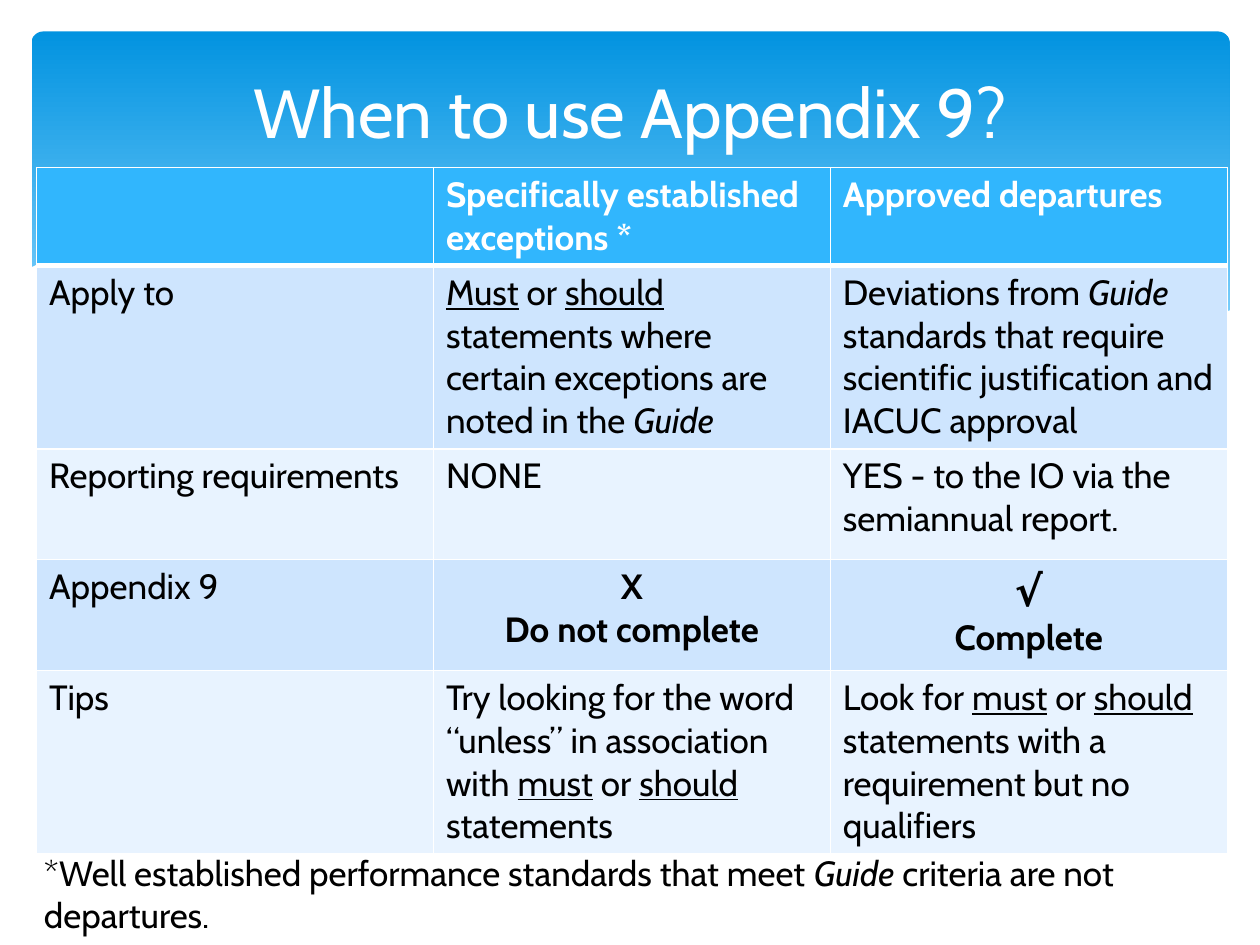
from lxml import etree
from pptx import Presentation
from pptx.dml.color import RGBColor
from pptx.enum.shapes import MSO_SHAPE
from pptx.enum.text import MSO_ANCHOR, PP_ALIGN
from pptx.oxml.ns import qn
from pptx.util import Inches, Pt

COLORS = {
    "white": "FFFFFF",
    "black": "000000",
    "top": "0293E0",
    "bottom": "83D3FE",
    "header": "31B6FD",
    "odd": "CEE5FE",
    "even": "E8F3FF",
}


def add_run(p, text, style="", size=20, color="black"):
    r = p.add_run()
    r.text = text
    r.font.name = "Cabin"
    r.font.size = Pt(size)
    r.font.color.rgb = RGBColor.from_string(COLORS[color])
    r.font.bold = "b" in style
    r.font.italic = "i" in style
    r.font.underline = "u" in style


def add_border(cell, side, width):
    ln = etree.Element(qn(f"a:ln{side}"), w=str(Pt(width)))
    fill = etree.SubElement(ln, qn("a:solidFill"))
    etree.SubElement(fill, qn("a:srgbClr"), val=COLORS["white"])
    cell._tc.get_or_add_tcPr().insert("LRTB".index(side), ln)


prs = Presentation()
prs.slide_width, prs.slide_height = Inches(10), Inches(7.5)
s = prs.slides.add_slide(prs.slide_layouts[6])

banner = s.shapes.add_shape(
    MSO_SHAPE.ROUNDED_RECTANGLE, Inches(0.25), Inches(0.25), Inches(9.51), Inches(2.7)
)
banner.adjustments[0] = 0.034
banner.shadow.inherit = False
banner.line.fill.background()
banner.fill.gradient()
banner.fill.gradient_angle = 270
for stop, position, color in zip(banner.fill.gradient_stops, (0, 0.9), ("top", "bottom")):
    stop.position = position
    stop.color.rgb = RGBColor.from_string(COLORS[color])

wave_points = [
    (9.77, 2.46), (9.5, 2.56), (9.2, 2.65), (8.87, 2.71), (8.5, 2.75), (8.09, 2.77),
    (7.61, 2.75), (7.08, 2.7), (6.48, 2.62), (5.79, 2.5), (5.03, 2.33), (4.47, 2.2),
    (3.91, 2.07), (3.4, 1.97), (2.92, 1.9), (2.5, 1.86), (2.11, 1.84), (1.77, 1.84),
    (1.46, 1.85), (1.19, 1.87), (0.95, 1.91), (0.76, 1.95), (0.59, 1.99), (0.46, 2.03),
    (0.36, 2.07), (0.23, 2.13), (0.23, 3.29), (9.77, 3.29),
]
points = [(Inches(x), Inches(y)) for x, y in wave_points]
builder = s.shapes.build_freeform(*points[0])
builder.add_line_segments(points[1:], close=True)
wave = builder.convert_to_shape()
wave.shadow.inherit = False
wave.fill.solid()
wave.fill.fore_color.rgb = RGBColor.from_string(COLORS["white"])
wave.line.fill.background()

rows = [
    [
        [],
        [[("Specifically established exceptions *", "b")]],
        [[("Approved departures", "b")]],
    ],
    [
        [[("Apply to", "")]],
        [[("Must", "u"), (" or ", ""), ("should ", "u"),
          ("statements where certain exceptions are noted in the ", ""), ("Guide", "i")]],
        [[("Deviations from ", ""), ("Guide ", "i"),
          ("standards that require scientific justification and IACUC approval", "")]],
    ],
    [
        [[("Reporting requirements", "")]],
        [[("NONE", "")]],
        [[("YES - to the IO via the semiannual report.", "")]],
    ],
    [
        [[("Appendix 9", "")]],
        [[("X", "b")], [("Do not complete", "b")]],
        [[("√", "b")], [("Complete", "b")]],
    ],
    [
        [[("Tips", "")]],
        [[("Try looking for the word “unless” in association with ", ""), ("must", "u"),
          (" or ", ""), ("should", "u"), (" statements", "")]],
        [[("Look for ", ""), ("must", "u"), (" or ", ""), ("should", "u"),
          (" statements with a requirement but no qualifiers", "")]],
    ],
]
row_heights = [0.63, 1.41, 0.88, 0.88, 1.41]

table = s.shapes.add_table(
    5, 3, Inches(0.29), Inches(1.33), Inches(9.46), Inches(5.39)
).table
for column in table.columns:
    column.width = Inches(3.15)
for i, row in enumerate(rows):
    table.rows[i].height = Inches(row_heights[i])
    fill = "header" if i == 0 else "odd" if i % 2 else "even"
    for j, paragraphs in enumerate(row):
        cell = table.cell(i, j)
        cell.fill.solid()
        cell.fill.fore_color.rgb = RGBColor.from_string(COLORS[fill])
        for side in "LRTB":
            add_border(cell, side, 3 if (i, side) in ((0, "B"), (1, "T")) else 1)
        tf = cell.text_frame
        for k, runs in enumerate(paragraphs):
            p = tf.add_paragraph() if k else tf.paragraphs[0]
            if len(paragraphs) > 1:
                p.alignment = PP_ALIGN.CENTER
            for text, style in runs:
                add_run(p, text, style, size=24 if text == "√" else 20,
                        color="black" if i else "white")

title = s.shapes.add_textbox(Inches(0.5), Inches(0.5), Inches(9), Inches(0.75))
tf = title.text_frame
tf.word_wrap = True
tf.vertical_anchor = MSO_ANCHOR.MIDDLE
p = tf.paragraphs[0]
p.alignment = PP_ALIGN.CENTER
add_run(p, "When to use Appendix 9?", size=39.6, color="white")

footnote = s.shapes.add_textbox(Inches(0.25), Inches(6.71), Inches(9.42), Inches(0.77))
tf = footnote.text_frame
tf.word_wrap = True
p = tf.paragraphs[0]
add_run(p, "*Well established performance standards that meet ")
add_run(p, "Guide ", "i")
add_run(p, "criteria are not departures.")

prs.save("out.pptx")
